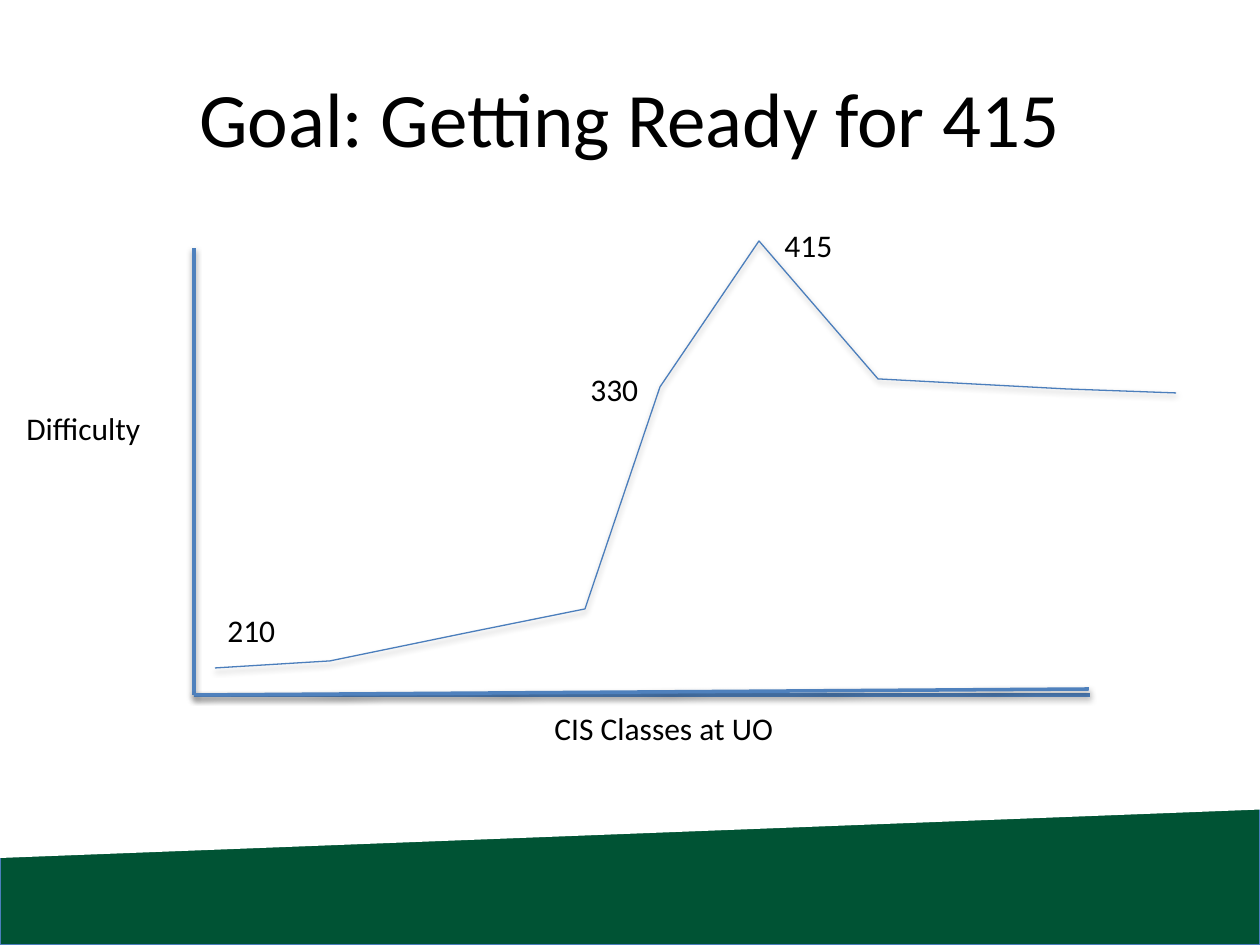
from lxml import etree
from pptx import Presentation
from pptx import util as u
from pptx.dml.color import RGBColor
from pptx.enum import shapes, text
from pptx.oxml.ns import qn

SCALE = 914400 / 126
PAGE_W, PAGE_H = 1260, 945
GREEN, WHITE, BLACK = "005334", "FFFFFF", "000000"
AXIS_BLUE, CURVE_BLUE = "4F81BD", "4B7EBC"


def px(length):
    return u.Emu(round(length * SCALE))


def color(value):
    return RGBColor.from_string(value)


def style_line(shape, value, width, distance, opacity):
    """Set the outline and a soft shadow falling straight down."""
    shape.line.color.rgb = color(value)
    shape.line.width = u.Pt(width)
    properties = shape._element.spPr
    for old in properties.findall(qn("a:effectLst")):
        properties.remove(old)
    effects = etree.SubElement(properties, qn("a:effectLst"))
    shadow = etree.SubElement(
        effects, qn("a:outerShdw"), blurRad="40000", dist=str(distance),
        dir="5400000", rotWithShape="0")
    tint = etree.SubElement(shadow, qn("a:srgbClr"), val=BLACK)
    etree.SubElement(tint, qn("a:alpha"), val=str(opacity * 1000))


def add_text(page, words, box, size, align=text.PP_ALIGN.LEFT, wrap=False):
    label = page.shapes.add_textbox(*map(px, box))
    frame = label.text_frame
    frame.word_wrap = wrap
    if wrap:
        frame.vertical_anchor = text.MSO_ANCHOR.MIDDLE
    else:
        frame.auto_size = text.MSO_AUTO_SIZE.SHAPE_TO_FIT_TEXT
    para = frame.paragraphs[0]
    para.text = words
    para.alignment = align
    para.font.name = "Calibri"
    para.font.size = u.Pt(size)
    para.font.color.rgb = color(BLACK)


def add_footer(page, left, top, width, height):
    """Green band whose top edge is cut at a slant by a white parallelogram."""
    band = page.shapes.add_shape(
        shapes.MSO_SHAPE.RECTANGLE, *map(px, (left, top, width, height)))
    band.fill.solid()
    band.fill.fore_color.rgb = color(GREEN)
    style_line(band, CURVE_BLUE, 0.75, 23000, 35)

    depth = 292
    middle_x, middle_y = left + width / 2, top + 5
    cut = page.shapes.add_shape(
        shapes.MSO_SHAPE.PARALLELOGRAM, px(middle_x - depth / 2),
        px(middle_y - width / 2), px(depth), px(width))
    cut.adjustments[0] = 0.166
    cut.rotation = 90
    cut._element.spPr.xfrm.set("flipH", "1")
    cut.shadow.inherit = False
    cut.fill.solid()
    cut.fill.fore_color.rgb = color(WHITE)
    cut.line.fill.background()


def add_axis(page, start, end):
    axis = page.shapes.add_connector(
        shapes.MSO_CONNECTOR.STRAIGHT, *map(px, start + end))
    style_line(axis, AXIS_BLUE, 2, 20000, 38)


def add_curve(page, points):
    builder = page.shapes.build_freeform(*points[0], scale=SCALE)
    builder.add_line_segments(points[1:], close=False)
    curve = builder.convert_to_shape()
    curve.fill.background()
    style_line(curve, CURVE_BLUE, 0.75, 23000, 35)


def add_difficulty_plot(page, left, top, width, height):
    """The box runs from the curve's peak to the origin and the axis end."""
    def at(x, y):
        return left + x, top + y

    origin = at(0, height)
    add_axis(page, origin, at(width, height))
    add_axis(page, origin, at(0, 7))
    add_curve(page, [at(*point) for point in (
        (21, 427), (136, 420), (272, 392), (391, 368), (466, 146),
        (565, 0), (684, 138), (872, 148), (982, 152))])
    add_axis(page, origin, at(width - 1, height - 6))
    for words, x, y, label_width in (
            ("Difficulty", -180, 162, 141),
            ("CIS Classes at UO", 348, 462, 246),
            ("330", 384, 123, 74),
            ("415", 578, -21, 74),
            ("210", 21, 364, 74)):
        add_text(page, words, at(x, y) + (label_width, 50), 18)


def main():
    deck = Presentation()
    deck.slide_width, deck.slide_height = px(PAGE_W), px(PAGE_H)
    page = deck.slides.add_slide(deck.slide_layouts[6])
    add_footer(page, 0, 707, PAGE_W, 238)
    add_text(page, "Goal: Getting Ready for 415", (63, 38, 1134, 158), 44,
             text.PP_ALIGN.CENTER, wrap=True)
    add_difficulty_plot(page, 194, 241, 896, 454)
    deck.save("out.pptx")


if __name__ == "__main__":
    main()
